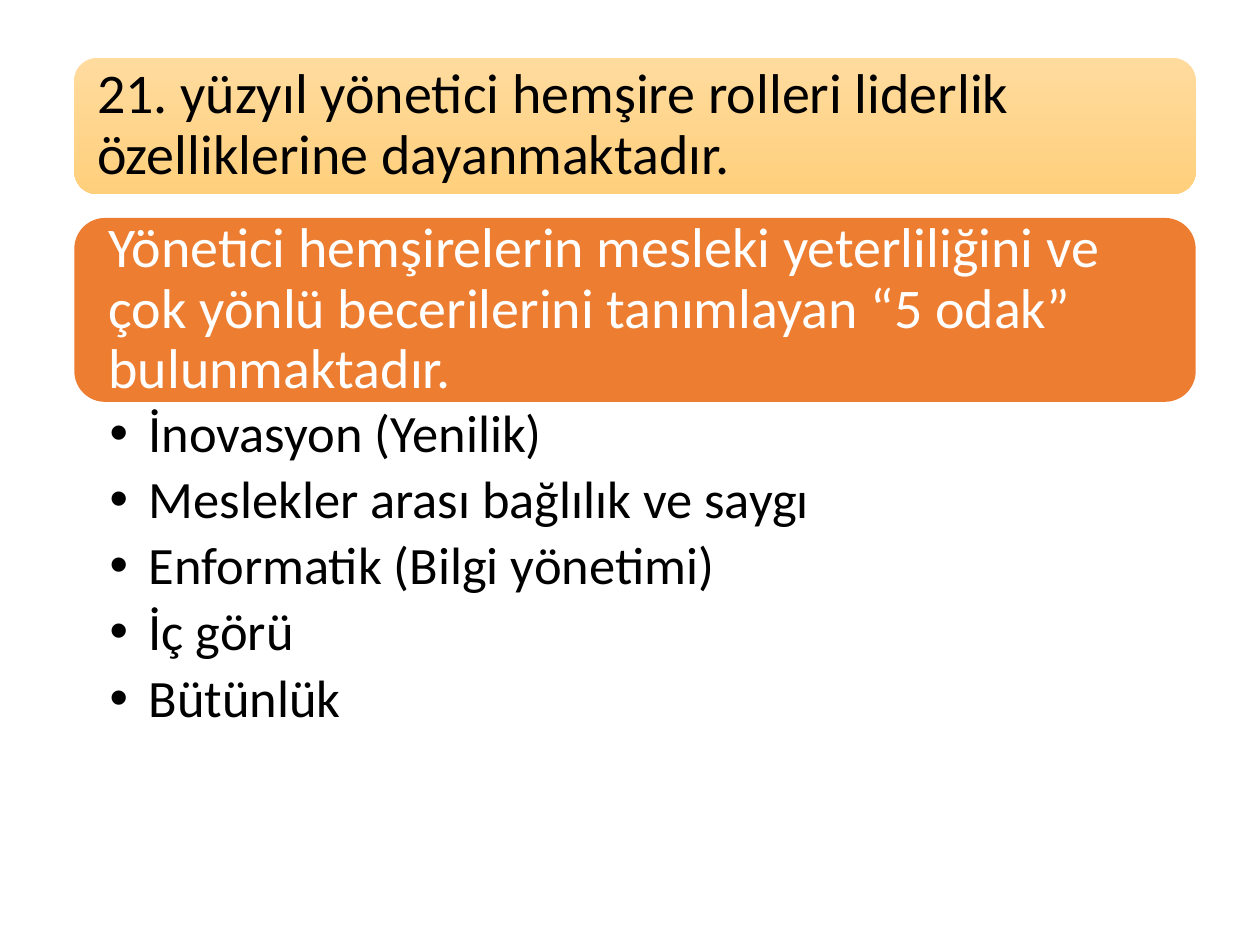
"""Build a slide on the leadership roles of nurse managers."""
import pptx
import pptx.util
import pptx.dml.color
import pptx.enum.shapes
import pptx.enum.text

WIDE, HIGH = 10, 7.5
LEFT, SPAN = 0.59, 8.9
HEAD = "21. yüzyıl yönetici hemşire rolleri liderlik özelliklerine dayanmaktadır."
CLAIM = ("Yönetici hemşirelerin mesleki yeterliliğini ve çok yönlü becerilerini "
         "tanımlayan “5 odak” bulunmaktadır.")
FOCI = [
    "İnovasyon (Yenilik)",
    "Meslekler arası bağlılık ve saygı",
    "Enformatik (Bilgi yönetimi)",
    "İç görü",
    "Bütünlük",
]
ROWS = {"head": (0.46, 1.08), "claim": (1.73, 1.46), "foci": (3.19, 3.47)}
FADE = ["FFDB9E", "FFD07C"]
ORANGE, BLACK, WHITE = "ED7D31", "000000", "FFFFFF"


def paint(text):
    return pptx.dml.color.RGBColor.from_string(text)


def area(row):
    top, tall = ROWS[row]
    return [pptx.util.Inches(n) for n in (LEFT, top, SPAN, tall)]


def place(shape, row):
    shape.left, shape.top, shape.width, shape.height = area(row)


def banner(row):
    kind = pptx.enum.shapes.MSO_SHAPE.ROUNDED_RECTANGLE
    shape = slide.shapes.add_shape(kind, *area(row))
    shape.shadow.inherit = False
    shape.line.fill.background()
    return shape


def write(shape, lines, size, ink, pads, anchor, after=0):
    frame = shape.text_frame
    frame.text = "\n".join(lines)
    frame.word_wrap = True
    frame.auto_size = pptx.enum.text.MSO_AUTO_SIZE.NONE
    frame.vertical_anchor = anchor
    (frame.margin_left, frame.margin_top, frame.margin_right,
     frame.margin_bottom) = [pptx.util.Inches(n) for n in pads]
    for para in frame.paragraphs:
        para.alignment = pptx.enum.text.PP_ALIGN.LEFT
        para.line_spacing = 0.9
        para.space_before = pptx.util.Pt(0)
        para.space_after = pptx.util.Pt(after)
        for run in para.runs:
            run.font.name = "Calibri"
            run.font.size = pptx.util.Pt(size)
            run.font.color.rgb = paint(ink)


deck = pptx.Presentation()
deck.slide_width = pptx.util.Inches(WIDE)
deck.slide_height = pptx.util.Inches(HIGH)
slide = deck.slides.add_slide(deck.slide_layouts[1])
title, body = slide.placeholders
middle = pptx.enum.text.MSO_ANCHOR.MIDDLE

fill = banner("head").fill
fill.gradient()
fill.gradient_angle = 270
for stop, tone in zip(fill.gradient_stops, FADE):
    stop.color.rgb = paint(tone)
place(title, "head")
write(title, [HEAD], 32, BLACK, (0.18, 0.13, 0.18, 0.13), middle)
slide.shapes._spTree.append(title._element)

claim = banner("claim")
claim.fill.solid()
claim.fill.fore_color.rgb = paint(ORANGE)
write(claim, [CLAIM], 32, WHITE, (0.2, 0.13, 0.2, 0.13), middle)

place(body, "foci")
write(body, FOCI, 30, BLACK, (0.28, 0.04, 0.23, 0.04),
      pptx.enum.text.MSO_ANCHOR.TOP, 5.4)
hang = pptx.util.Inches(0.31)
for para in body.text_frame.paragraphs:
    props = para._p.get_or_add_pPr()
    props.set("marL", str(hang))
    props.set("indent", str(-hang))

deck.save("out.pptx")
